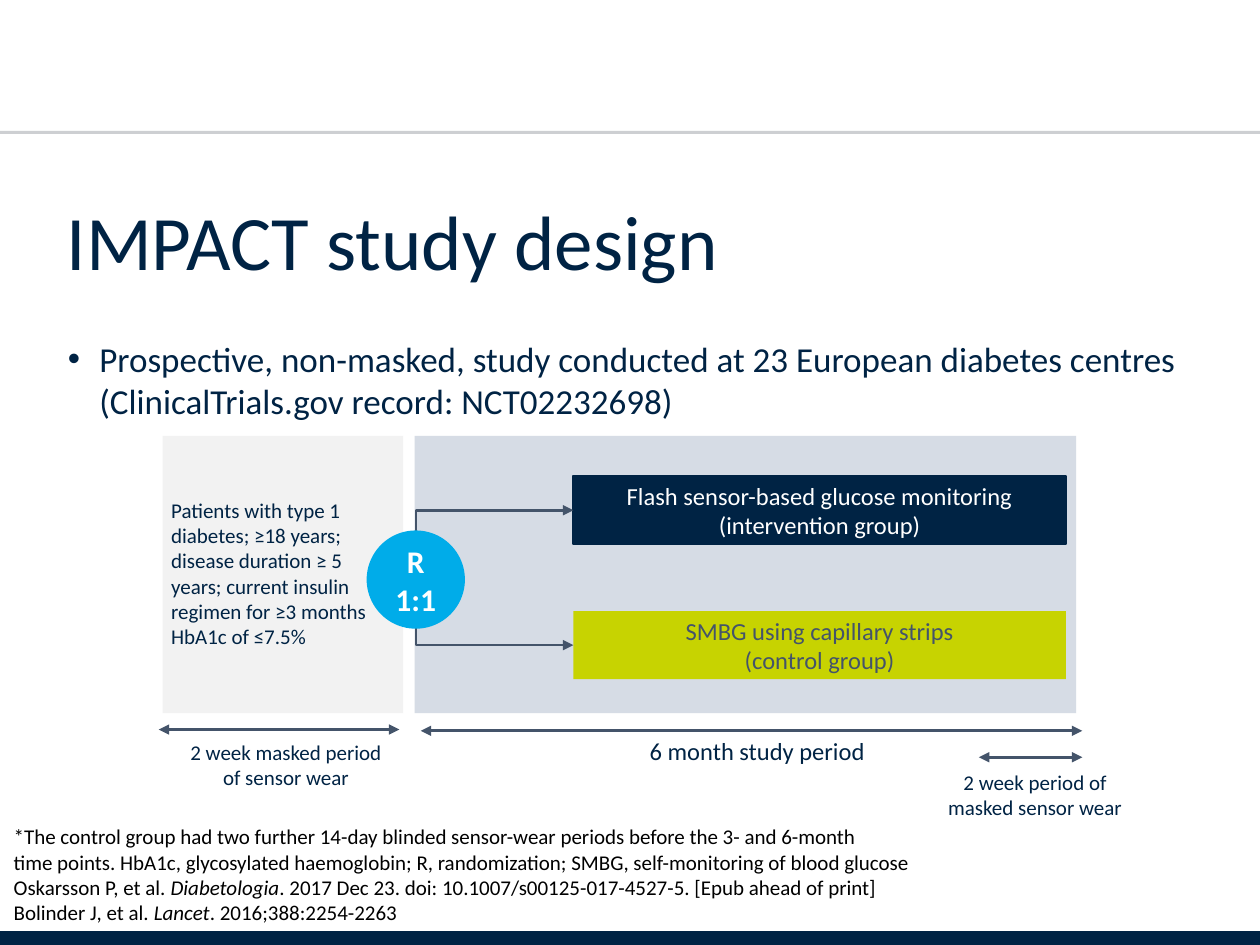
from dataclasses import dataclass

from lxml import etree
from pptx import Presentation
from pptx import util as u
from pptx.dml.color import RGBColor
from pptx.enum import shapes, text
from pptx.oxml.ns import qn


@dataclass(frozen=True)
class Theme:
    font: str = "Calibri"
    navy: str = "002344"
    slate: str = "44546A"
    rule: str = "9DA1A6"
    pale: str = "F2F2F2"
    mist: str = "D6DCE5"
    lime: str = "C7D301"
    blue: str = "00ACE9"
    white: str = "FFFFFF"
    black: str = "000000"
    title: int = 44
    body: int = 20
    badge: int = 18
    label: int = 14
    small: int = 12


LEFT = text.PP_ALIGN.LEFT
CENTER = text.PP_ALIGN.CENTER
RECTANGLE = shapes.MSO_SHAPE.RECTANGLE


class SlideBuilder:
    def __init__(self, slide, theme):
        self.slide = slide
        self.theme = theme

    def add_text(self, shape, paragraphs, size, color, align=LEFT, bold=False):
        """Fill a shape with paragraphs; each is a string or a list of (text, italic) runs.

        A line feed in a run becomes a line break.
        """
        frame = shape.text_frame
        frame.word_wrap = True
        for index, runs in enumerate(paragraphs):
            paragraph = frame.add_paragraph() if index else frame.paragraphs[0]
            paragraph.alignment = align
            if isinstance(runs, str):
                runs = [(runs, False)]
            for content, italic in runs:
                for number, line in enumerate(content.split("\n")):
                    if number:
                        paragraph.add_line_break()
                    run = paragraph.add_run()
                    run.text = line
                    font = run.font
                    font.name, font.size = self.theme.font, u.Pt(size)
                    font.bold, font.italic = bold, italic
                    font.color.rgb = RGBColor.from_string(color)
        return frame

    def title(self, content, left, top, width, height):
        shape = self.slide.shapes.title
        shape.left, shape.top = u.Inches(left), u.Inches(top)
        shape.width, shape.height = u.Inches(width), u.Inches(height)
        frame = self.add_text(shape, [content], self.theme.title, self.theme.navy)
        frame.auto_size = text.MSO_AUTO_SIZE.NONE
        frame.vertical_anchor = text.MSO_ANCHOR.MIDDLE
        frame.paragraphs[0].line_spacing = 0.9

    def textbox(self, paragraphs, left, top, width, height, size, color=None, align=LEFT):
        shape = self.slide.shapes.add_textbox(
            u.Inches(left), u.Inches(top), u.Inches(width), u.Inches(height))
        return self.add_text(shape, paragraphs, size, color or self.theme.navy, align)

    def bullet(self, content, left, top, width, height):
        frame = self.textbox([content], left, top, width, height, self.theme.body)
        properties = frame.paragraphs[0]._p.get_or_add_pPr()
        properties.set("marL", str(u.Inches(0.25)))
        properties.set("indent", str(-u.Inches(0.25)))
        etree.SubElement(properties, qn("a:buFont"), typeface="Arial")
        etree.SubElement(properties, qn("a:buChar"), char="•")

    def panel(self, left, top, width, height, fill, paragraphs=(), size=None,
              color=None, kind=RECTANGLE, outline=None, bold=False):
        shape = self.slide.shapes.add_shape(
            kind, u.Inches(left), u.Inches(top), u.Inches(width), u.Inches(height))
        shape.shadow.inherit = False
        shape.fill.solid()
        shape.fill.fore_color.rgb = RGBColor.from_string(fill)
        if outline:
            shape.line.color.rgb = RGBColor.from_string(outline)
            shape.line.width = u.Pt(1)
        else:
            shape.line.fill.background()
        frame = self.add_text(shape, paragraphs, size, color, CENTER, bold)
        frame.vertical_anchor = text.MSO_ANCHOR.MIDDLE

    def connector(self, start, end, color, weight, arrows=(), kind=shapes.MSO_CONNECTOR.STRAIGHT):
        connector = self.slide.shapes.add_connector(
            kind, *(u.Inches(value) for value in (*start, *end)))
        connector.line.color.rgb = RGBColor.from_string(color)
        connector.line.width = u.Pt(weight)
        line = connector.line._get_or_add_ln()
        for name in arrows:
            etree.SubElement(line, qn(f"a:{name}"), type="triangle")
        etree.SubElement(connector._element.spPr, qn("a:effectLst"))
        return connector

    def rule(self, y, color, weight, opacity=100):
        connector = self.connector((0, y), (10, y), color, weight)
        if opacity < 100:
            fill = connector.line._get_or_add_ln().find(".//" + qn("a:srgbClr"))
            etree.SubElement(fill, qn("a:alpha"), val=str(opacity * 1000))

    def period(self, left, right, y):
        self.connector((left, y), (right, y), self.theme.slate, 1.5, ("headEnd", "tailEnd"))

    def branch(self, start, end):
        """Draw an arrow that leaves vertically, turns once and arrives from the left."""
        (x1, y1), (x2, y2) = start, end
        run, rise = x2 - x1, abs(y2 - y1)
        left = (x1 + x2 - rise) / 2
        top = (y1 + y2 - run) / 2
        connector = self.connector(
            (left, top), (left + rise, top + run), self.theme.slate, 1.5,
            ("tailEnd",), shapes.MSO_CONNECTOR.ELBOW)
        properties = connector._element.spPr
        properties.find(qn("a:prstGeom")).set("prst", "bentConnector2")
        transform = properties.find(qn("a:xfrm"))
        upward = y2 < y1
        transform.set("rot", str((90 if upward else 270) * 60000))
        transform.set("flipH", "1")
        if upward:
            transform.set("flipV", "1")


def main():
    theme = Theme()
    presentation = Presentation()
    presentation.slide_width, presentation.slide_height = u.Inches(10), u.Inches(7.5)
    slide = presentation.slides.add_slide(presentation.slide_layouts[5])
    builder = SlideBuilder(slide, theme)

    builder.rule(7.46, theme.navy, 10)
    builder.rule(1.05, theme.rule, 1.75, opacity=50)
    builder.title("IMPACT study design", 0.43, 1.22, 9.14, 1.45)
    builder.bullet("Prospective, non-masked, study conducted at 23 European diabetes centres "
                   "(ClinicalTrials.gov record: NCT02232698)", 0.44, 2.63, 9.14, 0.8)

    for left, width, fill in ((1.29, 1.91, theme.pale), (3.29, 5.25, theme.mist)):
        builder.panel(left, 3.46, width, 2.2, fill)

    group_left, group_width, group_height = 4.55, 3.91, 0.54
    badge_x = 3.3
    groups = (
        (3.78, 4.31, theme.navy, theme.white, theme.navy,
         ["Flash sensor-based glucose monitoring (intervention group)"]),
        (4.85, 4.88, theme.lime, theme.slate, None,
         ["SMBG using capillary strips", "(control group)"]),
    )
    for top, branch_y, fill, color, outline, paragraphs in groups:
        builder.panel(group_left, top, group_width, group_height, fill, paragraphs,
                      theme.label, color, outline=outline)
        builder.branch((badge_x, branch_y), (group_left, top + group_height / 2))

    builder.textbox(["Patients with type 1 diabetes; ≥18 years;",
                     "disease duration ≥ 5 years; current insulin regimen for ≥3 months",
                     "HbA1c of ≤7.5%"], 1.26, 3.9, 1.82, 1.31, theme.small)
    builder.panel(2.91, 4.21, 0.78, 0.78, theme.blue, ["R", "1:1"], theme.badge,
                  theme.white, kind=shapes.MSO_SHAPE.OVAL, bold=True)

    periods = (
        ((3.34, 8.59, 5.8), "6 month study period", (3.34, 5.79, 5.34, 0.34), theme.label),
        ((1.26, 3.17, 5.79), "2 week masked period\nof sensor wear",
         (1.29, 5.82, 1.96, 0.5), theme.small),
        ((7.77, 8.59, 6.01), "2 week period of\nmasked sensor wear",
         (7.21, 6.06, 2.01, 0.5), theme.small),
    )
    for span, label, place, size in periods:
        builder.period(*span)
        builder.textbox([label], *place, size, align=CENTER)

    builder.textbox([
        "*The control group had two further 14-day blinded sensor-wear periods "
        "before the 3- and 6-month",
        "time points. HbA1c, glycosylated haemoglobin; R, randomization; "
        "SMBG, self-monitoring of blood glucose",
        [("Oskarsson P, et al. ", False), ("Diabetologia", True),
         (". 2017 Dec 23. doi: 10.1007/s00125-017-4527-5. [Epub ahead of print]\n"
          "Bolinder J, et al. ", False), ("Lancet", True), (". 2016;388:2254-2263", False)],
    ], 0.01, 6.49, 9.99, 0.91, theme.small, theme.black)

    presentation.save("out.pptx")


if __name__ == "__main__":
    main()
